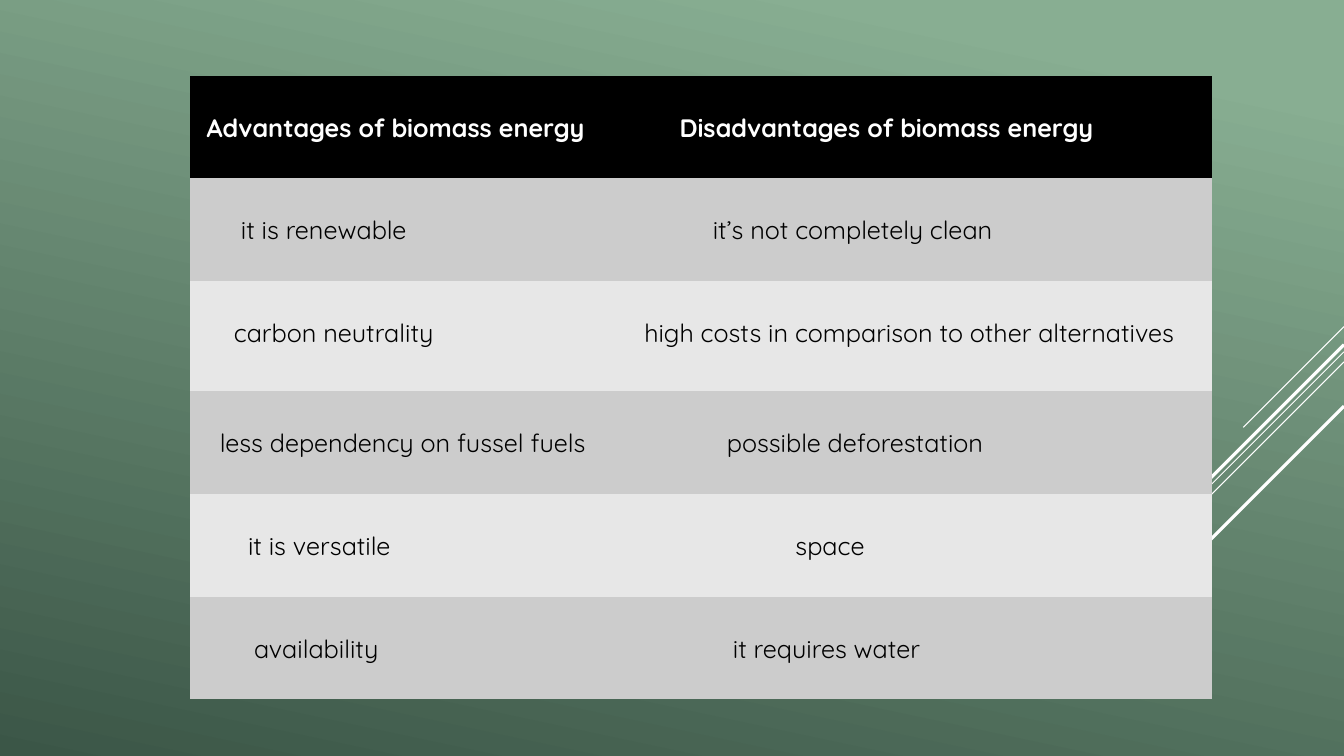
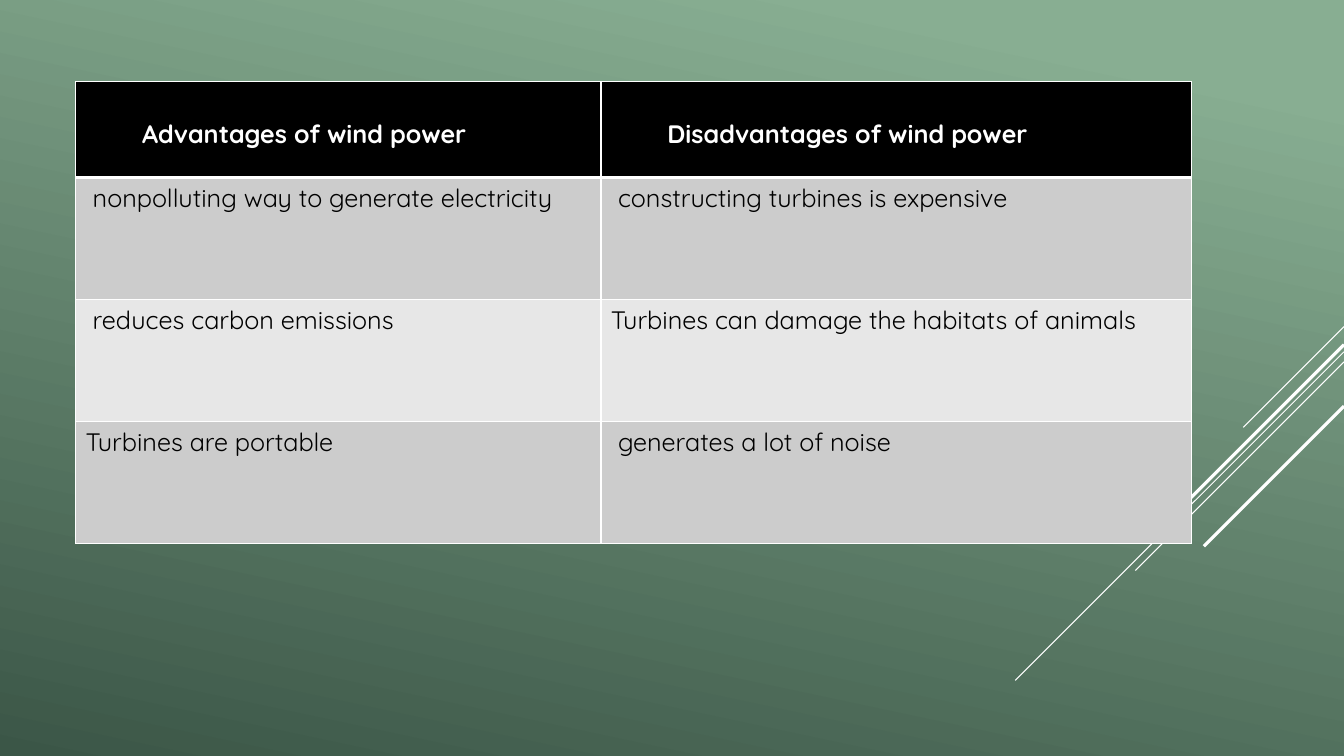
from pptx import Presentation
from pptx.dml.color import RGBColor
from pptx.enum.shapes import MSO_CONNECTOR
from pptx.oxml.ns import qn
from pptx.util import Inches, Pt
from lxml.etree import SubElement

COLORS = {"light": "88AE92", "dark": "3B5647", "white": "FFFFFF", "black": "000000",
          "band": "CCCCCC", "pale": "E7E7E7"}
FONT = "Quicksand"
SIZE = 18
PAD = 0.1        # inset left of the text in a cell
TOP = 0.05       # inset above the text in a cell
DROP = 0.36      # the same inset, one line lower
NO_STYLE = "{2D5ABB26-0587-4C30-8999-92F81FD0307C}"
# top at the right edge, horizontal run, weight
RAYS = [(3.24, 1.0, 0.75), (3.49, 3.26, 0.75), (3.59, 2.07, 0.75),
        (3.42, 1.91, 2.25), (4.03, 1.39, 2.25)]


def color(name):
    return RGBColor.from_string(COLORS[name])


class Deck:
    def __init__(self, width, height):
        self.prs = Presentation()
        self.prs.slide_width = Inches(width)
        self.prs.slide_height = Inches(height)
        self.width = width
        self.slide = None
        self.shade()

    def shade(self):
        """Give the master its gradient background."""
        fill = self.prs.slide_master.background.fill
        fill.gradient()
        fill.gradient_angle = 258
        for stop, name, place in zip(fill.gradient_stops, ("light", "dark"), (0.1, 1)):
            stop.color.rgb = color(name)
            stop.position = place

    def add(self):
        self.slide = self.prs.slides.add_slide(self.prs.slide_layouts[6])

    def rays(self):
        """Draw the diagonal lines and move them to the master, shared by all slides."""
        tree = self.prs.slide_master.shapes.element
        for top, run, weight in RAYS:
            ray = self.line(self.width, top, self.width - run, top + run, weight)
            tree.append(ray.element)

    def line(self, x1, y1, x2, y2, weight):
        line = self.slide.shapes.add_connector(
            MSO_CONNECTOR.STRAIGHT, Inches(x1), Inches(y1), Inches(x2), Inches(y2))
        line.line.color.rgb = color("white")
        line.line.width = Pt(weight)
        SubElement(line.element.find(qn("p:spPr")), qn("a:effectLst"))
        return line

    def table(self, left, top, cols, rows, cells, drop=False, grid=False):
        """Fill a banded table; each cell is (text, indent), drop lowers body text."""
        frame = self.slide.shapes.add_table(
            len(rows), len(cols), Inches(left), Inches(top),
            Inches(sum(cols)), Inches(sum(rows)))
        frame.element.find(".//" + qn("a:tableStyleId")).text = NO_STYLE
        table = frame.table
        for col, width in zip(table.columns, cols):
            col.width = Inches(width)
        for r, (height, pairs) in enumerate(zip(rows, cells)):
            table.rows[r].height = Inches(height)
            for c, (text, indent) in enumerate(pairs):
                cell = table.cell(r, c)
                if grid:
                    self.border(cell, r)
                self.cell(cell, r, text, indent, DROP if drop or r == 0 else TOP)

    def cell(self, cell, row, text, indent, top):
        head = row == 0
        cell.fill.solid()
        cell.fill.fore_color.rgb = color("black" if head else "band" if row % 2 else "pale")
        cell.margin_left = Inches(PAD + indent)
        cell.margin_top = Inches(top)
        cell.text_frame.text = text
        font = cell.text_frame.paragraphs[0].runs[0].font
        font.name = FONT
        font.size = Pt(SIZE)
        font.bold = head
        font.color.rgb = color("white" if head else "black")

    def border(self, cell, row):
        """Draw white cell borders, with a thick rule under the header."""
        props = cell._tc.get_or_add_tcPr()
        for side in "LRTB":
            thick = (row, side) in ((0, "B"), (1, "T"))
            edge = SubElement(props, qn("a:ln" + side), w=str(Pt(3 if thick else 1)))
            fill = SubElement(edge, qn("a:solidFill"))
            SubElement(fill, qn("a:srgbClr"), val=COLORS["white"])


def main():
    deck = Deck(13.33, 7.5)

    deck.add()
    deck.rays()
    deck.table(1.88, 0.75, [4.41, 5.73], [1.02, 1.02, 1.09, 1.02, 1.02, 1.02], [
        [("Advantages of biomass energy", 0.07), ("Disadvantages of biomass energy", 0.35)],
        [("it is renewable", 0.41), ("it’s not completely clean", 0.68)],
        [("carbon neutrality", 0.34), ("high costs in comparison to other alternatives", 0)],
        [("less dependency on fussel fuels", 0.2), ("possible deforestation", 0.82)],
        [("it is versatile", 0.48), ("space", 1.5)],
        [("availability", 0.54), ("it requires water", 0.88)],
    ], drop=True)

    deck.add()
    deck.table(0.75, 0.81, [5.21, 5.86], [0.95, 1.21, 1.21, 1.21], [
        [("Advantages of wind power", 0.56), ("Disadvantages of wind power", 0.56)],
        [("nonpolluting way to generate electricity", 0.07),
         ("constructing turbines is expensive", 0.07)],
        [("reduces carbon emissions", 0.07),
         ("Turbines can damage the habitats of animals", 0)],
        [("Turbines are portable", 0), ("generates a lot of noise", 0.07)],
    ], grid=True)

    deck.prs.save("out.pptx")


if __name__ == "__main__":
    main()
